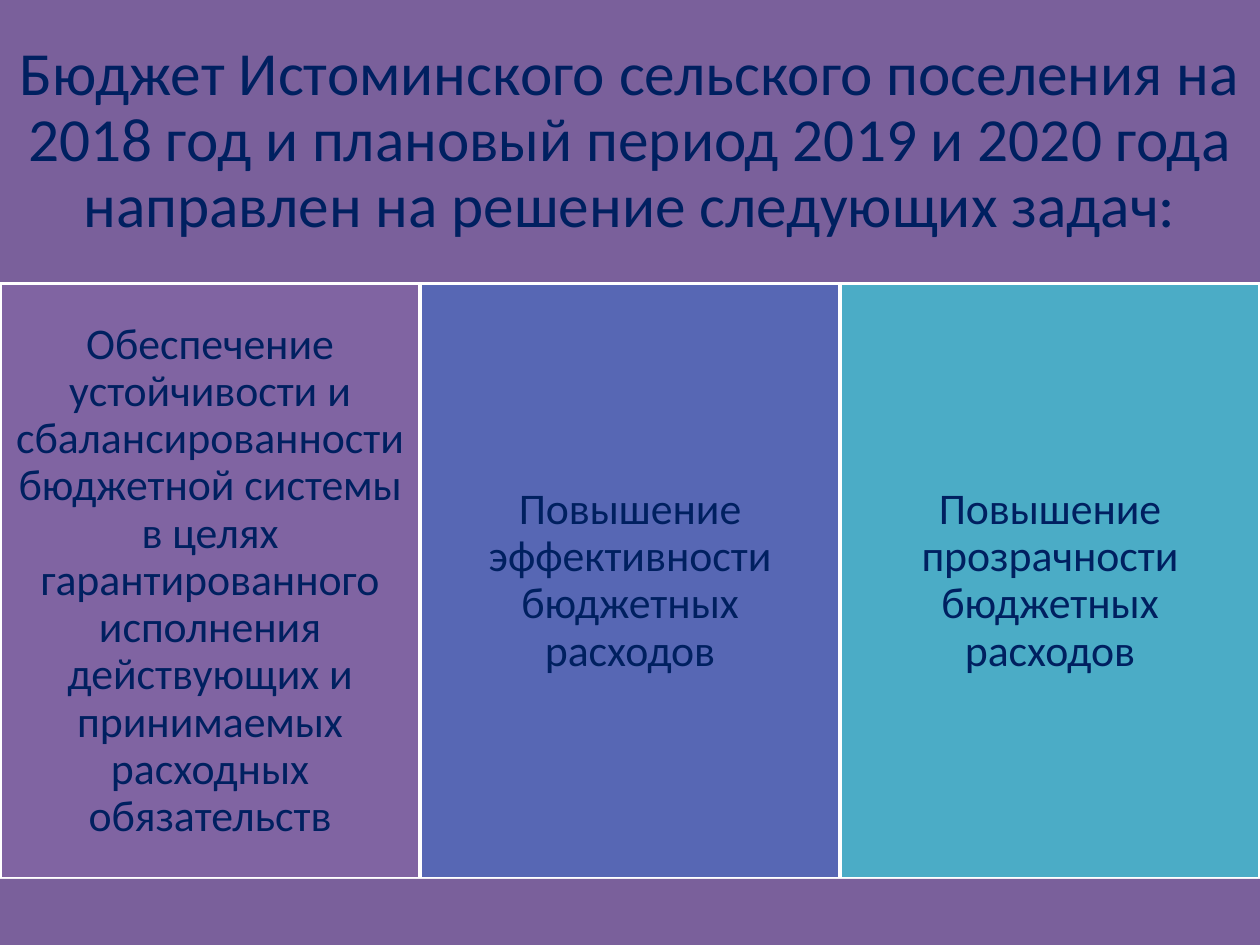
from lxml.etree import SubElement
from pptx import Presentation
from pptx.dml.color import RGBColor
from pptx.enum.shapes import MSO_SHAPE as Shape
from pptx.enum.text import MSO_ANCHOR as Anchor, PP_ALIGN as Align
from pptx.oxml.ns import qn
from pptx.util import Pt

WIDTH, HEIGHT = 720, 540
HEADER_HEIGHT, TASK_HEIGHT = 162, 340.2

NAVY = RGBColor(0x00, 0x20, 0x60)
WHITE = RGBColor(0xFF, 0xFF, 0xFF)
BAND = RGBColor(0x7A, 0x60, 0x9B)
PURPLE = RGBColor(0x80, 0x64, 0xA2)
INDIGO = RGBColor(0x57, 0x67, 0xB4)
TEAL = RGBColor(0x4B, 0xAC, 0xC6)

HEADING = ("Бюджет Истоминского сельского поселения на 2018 год и плановый "
           "период 2019 и 2020 года направлен на решение следующих задач:")
TASKS = [
    ("Обеспечение устойчивости и сбалансированности бюджетной системы в целях "
     "гарантированного исполнения действующих и принимаемых расходных "
     "обязательств", PURPLE),
    ("Повышение эффективности бюджетных расходов", INDIGO),
    ("Повышение прозрачности бюджетных расходов", TEAL),
]


class Board:
    font_name = "Calibri"
    text_color = NAVY
    border_color = WHITE
    border_width = 2

    def __init__(self, slide):
        self.slide = slide

    def block(self, left, top, width, height, fill):
        block = self.slide.shapes.add_shape(
            Shape.RECTANGLE, Pt(left), Pt(top), Pt(width), Pt(height))
        block.shadow.inherit = False
        block.fill.solid()
        block.fill.fore_color.rgb = fill
        block.line.fill.background()
        return block

    def outline(self, block):
        block.line.color.rgb = self.border_color
        block.line.width = Pt(self.border_width)

    def label(self, block, text, size, inset):
        frame = block.text_frame
        frame.word_wrap = True
        frame.vertical_anchor = Anchor.MIDDLE
        frame.margin_left = frame.margin_right = Pt(inset)
        frame.margin_top = frame.margin_bottom = Pt(inset)
        frame.text = text
        paragraph = frame.paragraphs[0]
        paragraph.alignment = Align.CENTER
        paragraph.line_spacing = 0.9
        self.space_after(paragraph, 35)
        font = paragraph.runs[0].font
        font.name = self.font_name
        font.size = Pt(size)
        font.color.rgb = self.text_color

    def space_after(self, paragraph, percent):
        """Set the gap below a paragraph relative to its text size."""
        gap = SubElement(paragraph._p.get_or_add_pPr(), qn("a:spcAft"))
        SubElement(gap, qn("a:spcPct")).set("val", str(percent * 1000))


def main():
    deck = Presentation()
    deck.slide_width, deck.slide_height = Pt(WIDTH), Pt(HEIGHT)
    board = Board(deck.slides.add_slide(deck.slide_layouts[6]))

    header = board.block(0, 0, WIDTH, HEADER_HEIGHT, BAND)
    board.label(header, HEADING, size=35, inset=10.8)

    task_width = WIDTH / len(TASKS)
    for column, (task, color) in enumerate(TASKS):
        card = board.block(column * task_width, HEADER_HEIGHT,
                           task_width, TASK_HEIGHT, color)
        board.outline(card)
        board.label(card, task, size=25, inset=7.2)

    footer_top = HEADER_HEIGHT + TASK_HEIGHT
    board.block(0, footer_top, WIDTH, HEIGHT - footer_top, BAND)
    deck.save("out.pptx")


if __name__ == "__main__":
    main()
